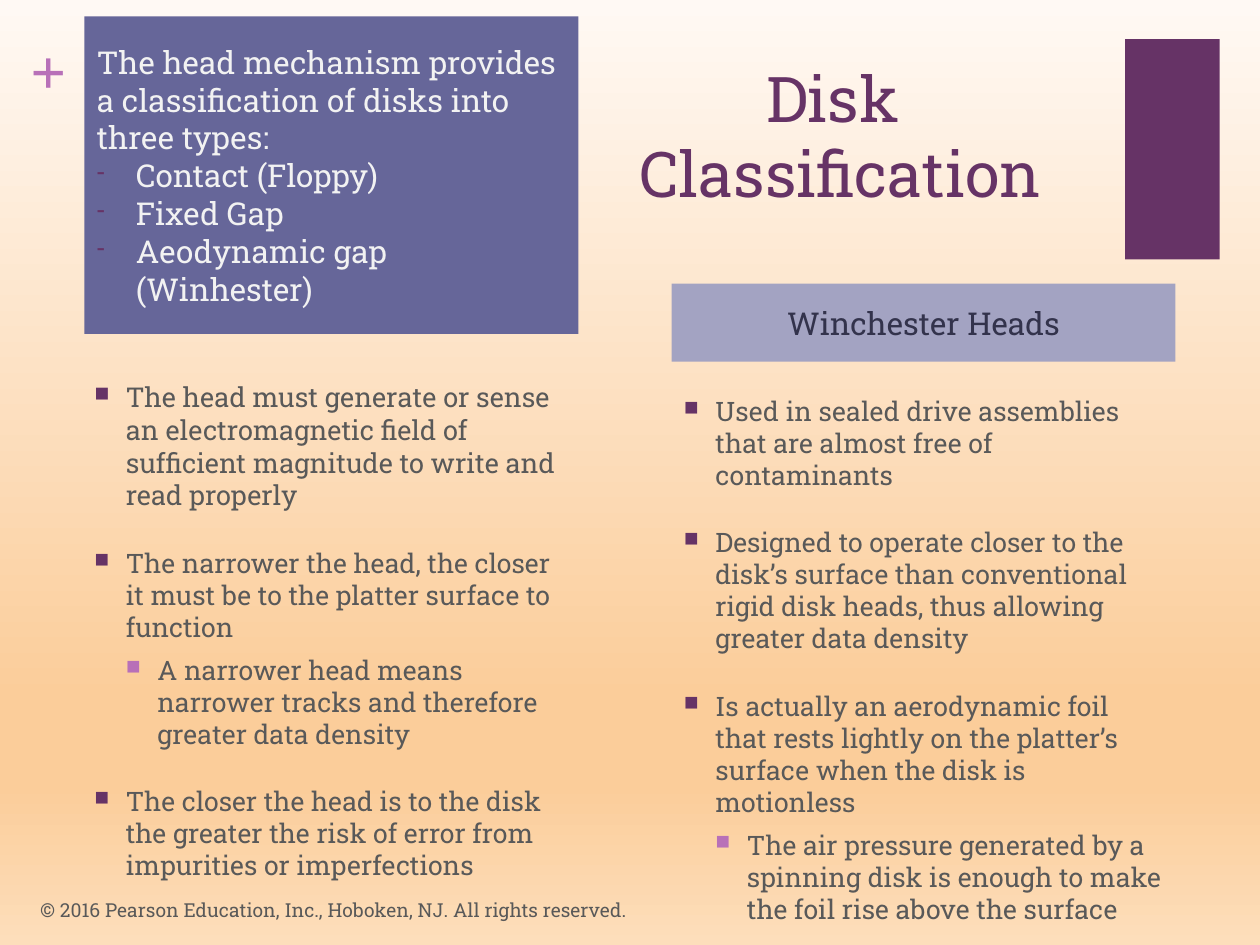
from lxml.etree import SubElement
from pptx import Presentation
from pptx.dml.color import RGBColor
from pptx.enum.shapes import MSO_SHAPE
from pptx.enum.text import MSO_ANCHOR, PP_ALIGN
from pptx.oxml.ns import qn
from pptx.util import Inches, Pt

COLORS = {
    "plum": "663366", "orchid": "B870B8", "slate": "666699", "lavender": "A3A3C2",
    "gray": "595959", "white": "F2F2F2", "navy": "33334C",
}
BACKGROUND = [(0, "FFF9F4"), (74, "FBCD9A"), (83, "FBCD9A"), (100, "FDDEBB")]
LEVELS = [("■", "plum", 0.25, 20), ("■", "orchid", 0.5, 6)]

HEAD_POINTS = [
    (0, 15.6, "The head must generate or sense an electromagnetic field of "
              "sufficient magnitude to write and read properly"),
    (0, 15.3, "The narrower the head, the closer it must be to the platter surface to function"),
    (1, 15.3, "A narrower head means narrower tracks and therefore greater data density"),
    (0, 15.3, "The closer the head is to the disk the greater the risk of error from "
              "impurities or imperfections"),
]
WINCHESTER_POINTS = [
    (0, 15.3, "Used in sealed drive assemblies that are almost free of contaminants"),
    (0, 15.3, "Designed to operate closer to the disk’s surface than conventional rigid "
              "disk heads, thus allowing greater data density"),
    (0, 15.3, "Is actually an aerodynamic foil that rests lightly on the platter’s surface "
              "when the disk is motionless"),
    (1, 15.3, "The air pressure generated by a spinning disk is enough to make the foil "
              "rise above the surface"),
]
DISK_TYPES = ["Contact (Floppy)", "Fixed Gap", "Aeodynamic gap (Winhester)"]


class Deck:
    """Holds the style and the current slide, and draws each kind of element."""

    font = "Roboto Slab"

    def __init__(self, prs):
        self.s = prs.slides.add_slide(prs.slide_layouts[6])

    def background(self, stops):
        fill = self.s.background.fill
        fill.gradient()
        fill.gradient_angle = 270
        gs_list = self.s.element.find(".//" + qn("a:gsLst"))
        for gs in list(gs_list):
            gs_list.remove(gs)
        for pos, color in stops:
            gs = SubElement(gs_list, qn("a:gs"), pos=str(pos * 1000))
            SubElement(gs, qn("a:srgbClr"), val=color)

    def rect(self, box, color):
        sp = self.s.shapes.add_shape(MSO_SHAPE.RECTANGLE, *map(Inches, box))
        sp.shadow.inherit = False
        sp.fill.solid()
        sp.fill.fore_color.rgb = RGBColor.from_string(COLORS[color])
        sp.line.fill.background()
        return self.frame(sp, MSO_ANCHOR.MIDDLE, 0.1, 0)

    def textbox(self, box, anchor=MSO_ANCHOR.TOP, inset_x=0.1, inset_y=0.05):
        sp = self.s.shapes.add_textbox(*map(Inches, box))
        return self.frame(sp, anchor, inset_x, inset_y)

    def frame(self, sp, anchor, inset_x, inset_y):
        tf = sp.text_frame
        tf.word_wrap = True
        tf.vertical_anchor = anchor
        tf.margin_left = tf.margin_right = Inches(inset_x)
        tf.margin_top = tf.margin_bottom = Inches(inset_y)
        return tf

    def paragraph(self, tf, first=False, align=PP_ALIGN.LEFT):
        p = tf.paragraphs[0] if first else tf.add_paragraph()
        p.alignment = align
        return p

    def run(self, p, text, size, color, font=None, bold=False):
        r = p.add_run()
        r.text = text
        r.font.size = Pt(size)
        r.font.name = font or self.font
        r.font.bold = bold
        r.font.color.rgb = RGBColor.from_string(COLORS[color])

    def bullet(self, p, char, color, left, hanging):
        pPr = p._p.get_or_add_pPr()
        pPr.set("marL", str(Inches(left)))
        pPr.set("indent", str(-Inches(hanging)))
        SubElement(SubElement(pPr, qn("a:buClr")), qn("a:srgbClr"), val=COLORS[color])
        SubElement(pPr, qn("a:buSzPct"), val="75000")
        SubElement(pPr, qn("a:buChar"), char=char)

    def points(self, box, items):
        tf = self.textbox(box)
        for i, (level, size, text) in enumerate(items):
            char, color, left, space = LEVELS[level]
            p = self.paragraph(tf, first=i == 0)
            p.level = level
            self.bullet(p, char, color, left, 0.25)
            p.space_before = Pt(space if i else 0)
            self.run(p, text, size, "gray")


def main():
    prs = Presentation()
    prs.slide_width, prs.slide_height = Inches(10), Inches(7.5)
    deck = Deck(prs)
    deck.background(BACKGROUND)
    deck.rect((8.93, 0.31, 0.75, 1.75), "plum")

    tf = deck.textbox((0.24, 0.25, 0.29, 0.61), inset_x=0, inset_y=0)
    deck.run(deck.paragraph(tf, True), "+", 36, "orchid", "Times New Roman", True)

    tf = deck.textbox((4.42, 0.42, 4.5, 1.22))
    p = deck.paragraph(tf, True, PP_ALIGN.CENTER)
    deck.run(p, "Disk ", 36, "plum")
    p.add_line_break()
    deck.run(p, "Classification", 36, "plum")

    deck.points((0.65, 2.97, 3.92, 3.76), HEAD_POINTS)
    deck.points((5.33, 3.08, 4.02, 4.12), WINCHESTER_POINTS)

    tf = deck.rect((0.67, 0.13, 3.92, 2.52), "slate")
    intro = "The head mechanism provides a classification of disks into three types:"
    deck.run(deck.paragraph(tf, True), intro, 18, "white")
    for disk_type in DISK_TYPES:
        p = deck.paragraph(tf)
        deck.bullet(p, "-", "plum", 0.31, 0.31)
        deck.run(p, disk_type, 18, "white")

    tf = deck.rect((5.33, 2.25, 4, 0.62), "lavender")
    deck.run(deck.paragraph(tf, True, PP_ALIGN.CENTER), "Winchester Heads", 18, "navy")

    tf = deck.textbox((0.22, 7.02, 6.7, 0.4), MSO_ANCHOR.MIDDLE)
    notice = "© 2016 Pearson Education, Inc., Hoboken, NJ. All rights reserved."
    deck.run(deck.paragraph(tf, True), notice, 11, "gray")
    prs.save("out.pptx")


if __name__ == "__main__":
    main()
